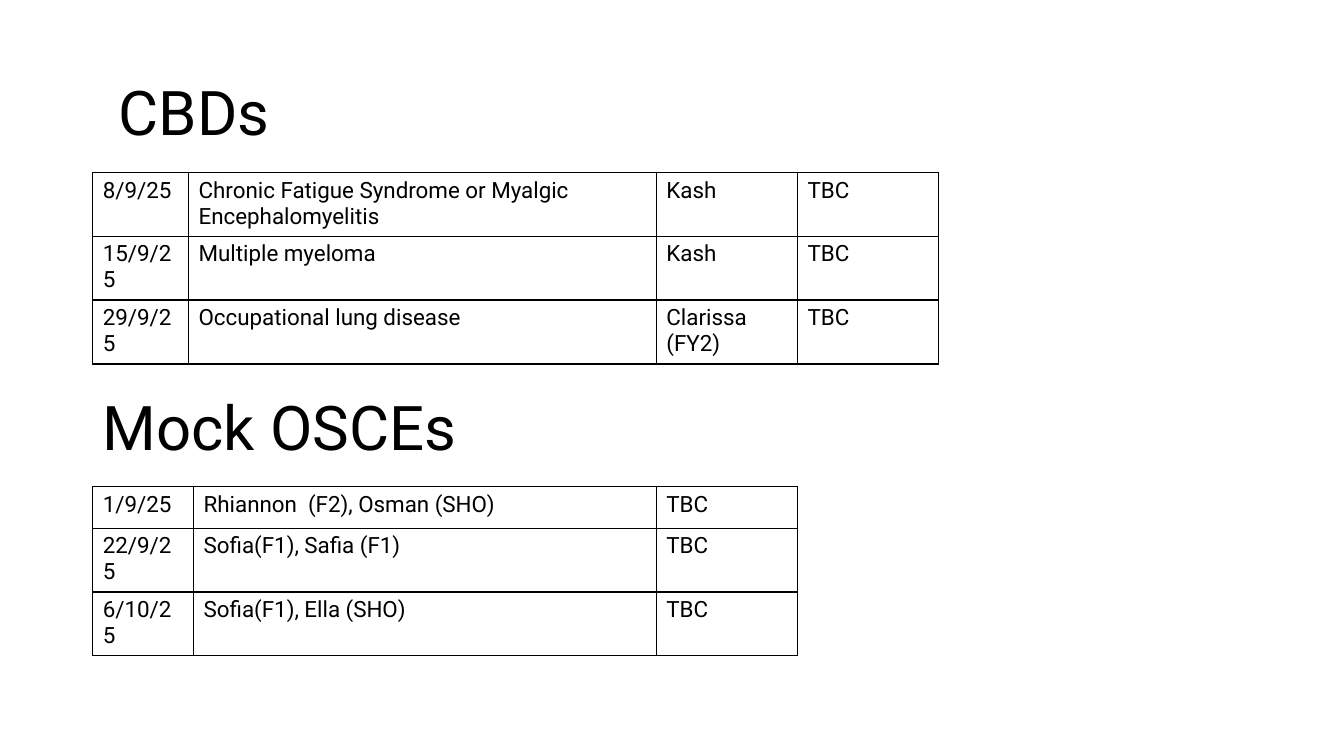
import pptx
import pptx.dml.color
import pptx.enum.text
import pptx.oxml
import pptx.oxml.ns
import pptx.util

Inches = pptx.util.Inches
Pt = pptx.util.Pt

FONT = "Roboto"
COLORS = {"text": "000000", "border": "000000"}
ROW_HEIGHT = 0.41

CBD_ROWS = [
    ["8/9/25", "Chronic Fatigue Syndrome or Myalgic Encephalomyelitis", "Kash", "TBC"],
    ["15/9/25", "Multiple myeloma", "Kash", "TBC"],
    ["29/9/25", "Occupational lung disease", "Clarissa (FY2)", "TBC"],
]
OSCE_ROWS = [
    ["1/9/25", "Rhiannon  (F2), Osman (SHO)", "TBC"],
    ["22/9/25", "Sofia(F1), Safia (F1)", "TBC"],
    ["6/10/25", "Sofia(F1), Ella (SHO)", "TBC"],
]


def style_paragraph(p, size):
    p.font.name = FONT
    p.font.size = Pt(size)
    p.font.color.rgb = pptx.dml.color.RGBColor.from_string(COLORS["text"])


def add_heading(slide, text, left, top):
    sp = slide.shapes.add_textbox(Inches(left), Inches(top), Inches(11.5), Inches(1.45))
    tf = sp.text_frame
    tf.word_wrap = True
    tf.vertical_anchor = pptx.enum.text.MSO_ANCHOR.MIDDLE
    p = tf.paragraphs[0]
    p.text = text
    p.line_spacing = 0.9
    style_paragraph(p, 44)


def add_borders(cell):
    """Draw a thin line on all four sides of the cell."""
    tc_pr = cell._tc.get_or_add_tcPr()
    for side in ("lnL", "lnR", "lnT", "lnB"):
        tc_pr.append(pptx.oxml.parse_xml(
            f'<a:{side} {pptx.oxml.ns.nsdecls("a")} w="{Pt(1)}"><a:solidFill>'
            f'<a:srgbClr val="{COLORS["border"]}"/></a:solidFill></a:{side}>'))


def add_schedule(slide, rows, left, top, widths):
    frame = slide.shapes.add_table(
        len(rows), len(widths), Inches(left), Inches(top),
        Inches(sum(widths)), Inches(ROW_HEIGHT * len(rows)))
    table = frame.table
    table.first_row = False
    table.horz_banding = False
    for column, width in zip(table.columns, widths):
        column.width = Inches(width)
    for r, values in enumerate(rows):
        table.rows[r].height = Inches(ROW_HEIGHT)
        for c, value in enumerate(values):
            cell = table.cell(r, c)
            cell.text = value
            style_paragraph(cell.text_frame.paragraphs[0], 16)
            add_borders(cell)
            cell.fill.background()


def main():
    prs = pptx.Presentation()
    prs.slide_width = Inches(13.33)
    prs.slide_height = Inches(7.5)
    slide = prs.slides.add_slide(prs.slide_layouts[6])
    add_heading(slide, "Mock OSCEs", 0.92, 3.55)
    add_schedule(slide, CBD_ROWS, 0.92, 1.71, [0.95, 4.64, 1.4, 1.4])
    add_heading(slide, "CBDs", 1.08, 0.42)
    add_schedule(slide, OSCE_ROWS, 0.92, 4.83, [1, 4.59, 1.4])
    prs.save("out.pptx")


if __name__ == "__main__":
    main()
